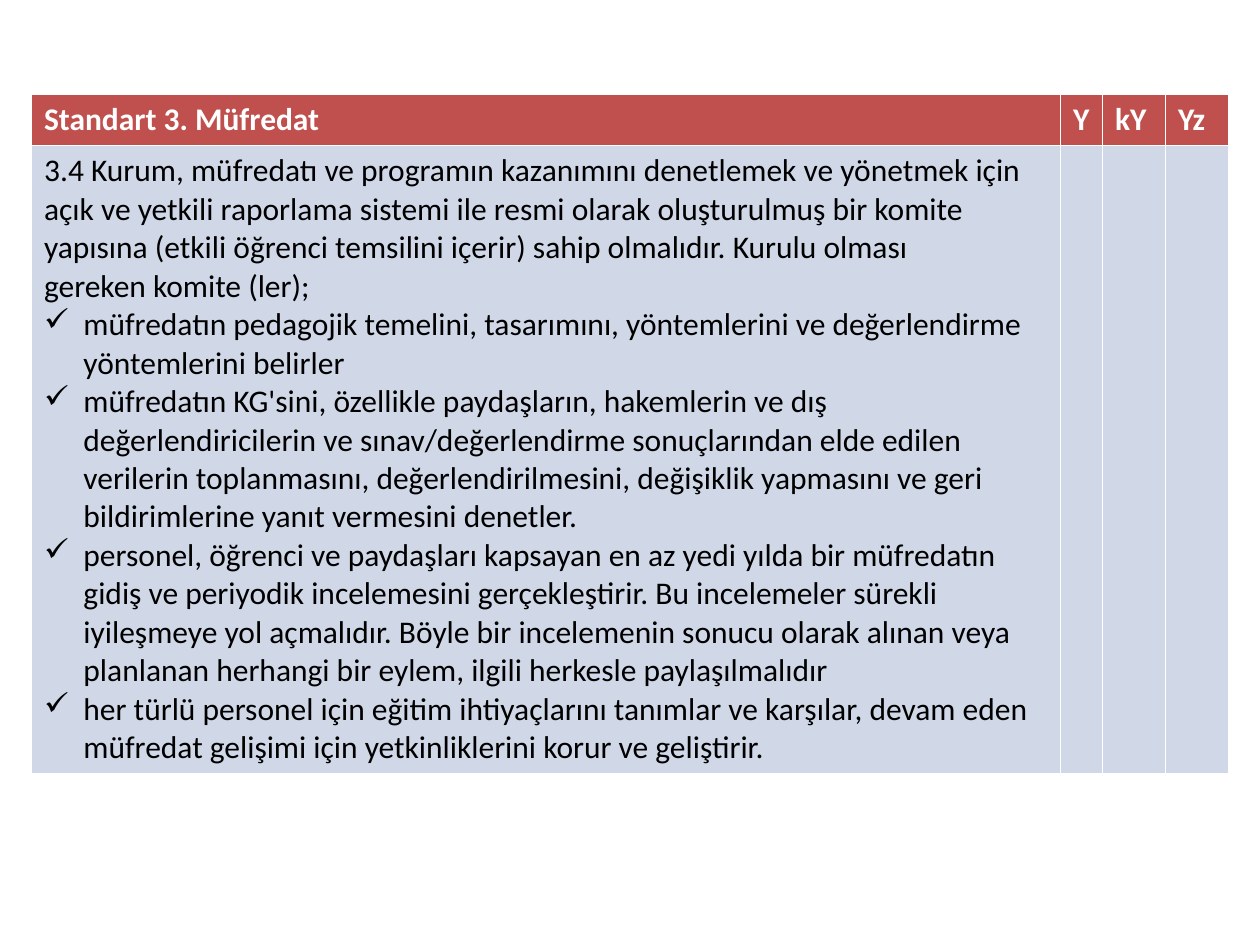
import pptx
import pptx.dml.color
import pptx.oxml.ns
import pptx.util
from lxml import etree

RED = pptx.dml.color.RGBColor(0xC0, 0x50, 0x4D)
PALE_BLUE = pptx.dml.color.RGBColor(0xD0, 0xD8, 0xE8)
WHITE = pptx.dml.color.RGBColor(0xFF, 0xFF, 0xFF)
BLACK = pptx.dml.color.RGBColor(0x00, 0x00, 0x00)

HEADINGS = ["Standart 3. Müfredat", "Y", "kY", "Yz"]
COLUMN_WIDTHS = [588, 24, 36, 36]
HEADER_HEIGHT = 29.2
BODY_HEIGHT = 353
REQUIREMENT = (
    "3.4 Kurum, müfredatı ve programın kazanımını denetlemek ve yönetmek için açık ve "
    "yetkili raporlama sistemi ile resmi olarak oluşturulmuş bir komite yapısına (etkili "
    "öğrenci temsilini içerir) sahip olmalıdır. Kurulu olması\ngereken komite (ler);"
)
COMMITTEE_DUTIES = [
    "müfredatın pedagojik temelini, tasarımını, yöntemlerini ve değerlendirme "
    "yöntemlerini belirler",
    "müfredatın KG'sini, özellikle paydaşların, hakemlerin ve dış değerlendiricilerin ve "
    "sınav/değerlendirme sonuçlarından elde edilen verilerin toplanmasını, "
    "değerlendirilmesini, değişiklik yapmasını ve geri bildirimlerine yanıt vermesini "
    "denetler.",
    "personel, öğrenci ve paydaşları kapsayan en az yedi yılda bir müfredatın gidiş ve "
    "periyodik incelemesini gerçekleştirir. Bu incelemeler sürekli iyileşmeye yol "
    "açmalıdır. Böyle bir incelemenin sonucu olarak alınan veya planlanan herhangi bir "
    "eylem, ilgili herkesle paylaşılmalıdır",
    "her türlü personel için eğitim ihtiyaçlarını tanımlar ve karşılar, devam eden "
    "müfredat gelişimi için yetkinliklerini korur ve geliştirir.",
]


def write(paragraph, text, font="Calibri", size=18, color=BLACK, bold=False, bullet=None):
    """Write formatted text into a paragraph, with an optional hanging bullet."""
    for index, line in enumerate(text.split("\n")):
        if index:
            paragraph.add_line_break()
        run = paragraph.add_run()
        run.text = line
        run.font.name = font
        run.font.size = pptx.util.Pt(size)
        run.font.bold = bold
        run.font.color.rgb = color
    if bullet:
        indent = pptx.util.Pt(22.5)
        properties = paragraph._p.get_or_add_pPr()
        properties.set("marL", str(indent))
        properties.set("indent", str(-indent))
        etree.SubElement(properties, pptx.oxml.ns.qn("a:buChar"), char=bullet)


class StandardSlide:
    """Hold the colours and the current slide of an accreditation standard."""

    def __init__(self, slide, header_fill=RED, body_fill=PALE_BLUE):
        self.slide = slide
        self.row_fills = [header_fill, body_fill]

    def table(self, left, top, column_widths, row_heights):
        """Add a table with one fill colour per row."""
        grid = self.slide.shapes.add_table(
            len(row_heights), len(column_widths), pptx.util.Pt(left), pptx.util.Pt(top),
            pptx.util.Pt(sum(column_widths)), pptx.util.Pt(sum(row_heights)),
        ).table
        for column, width in zip(grid.columns, column_widths):
            column.width = pptx.util.Pt(width)
        for row, height, fill in zip(grid.rows, row_heights, self.row_fills):
            row.height = pptx.util.Pt(height)
            for cell in row.cells:
                cell.fill.solid()
                cell.fill.fore_color.rgb = fill
        return grid

    def header(self, grid, headings):
        """Fill the first row with column headings."""
        for cell, heading in zip(grid.rows[0].cells, headings):
            write(cell.text_frame.paragraphs[0], heading, color=WHITE, bold=True)

    def checklist(self, cell, introduction, items):
        """Fill a cell with an introduction and check-marked items."""
        write(cell.text_frame.paragraphs[0], introduction)
        for item in items:
            write(cell.text_frame.add_paragraph(), item, bullet="✓")


def main():
    """Build and save the curriculum standard slide."""
    presentation = pptx.Presentation()
    presentation.slide_width = pptx.util.Pt(720)
    presentation.slide_height = pptx.util.Pt(540)
    blank_layout = presentation.slide_layouts[6]
    standard = StandardSlide(presentation.slides.add_slide(blank_layout))
    criteria = standard.table(18, 54, COLUMN_WIDTHS, [HEADER_HEIGHT, BODY_HEIGHT])
    standard.header(criteria, HEADINGS)
    standard.checklist(criteria.cell(1, 0), REQUIREMENT, COMMITTEE_DUTIES)
    presentation.save("out.pptx")


if __name__ == "__main__":
    main()
